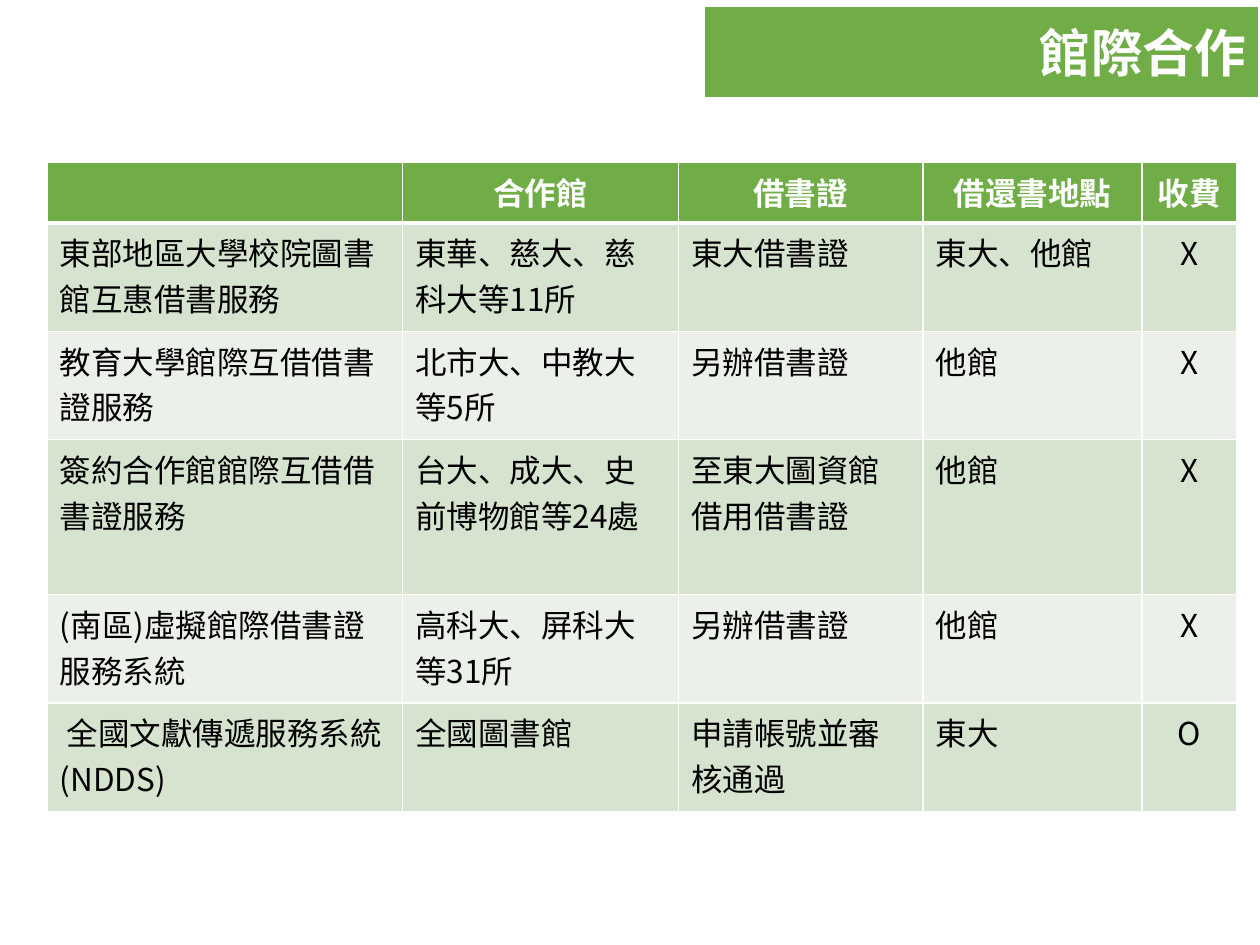
from dataclasses import dataclass

from lxml.etree import SubElement
from pptx import Presentation
from pptx.dml.color import RGBColor
from pptx.enum.shapes import MSO_SHAPE
from pptx.enum.text import MSO_ANCHOR, PP_ALIGN
from pptx.oxml.ns import qn
from pptx.util import Pt


@dataclass(frozen=True)
class Theme:
    """Colours, font and type sizes of the slide."""
    green: RGBColor = RGBColor(0x70, 0xAD, 0x47)
    band_dark: RGBColor = RGBColor(0xD5, 0xE3, 0xCF)
    band_light: RGBColor = RGBColor(0xEB, 0xF1, 0xE9)
    white: RGBColor = RGBColor(0xFF, 0xFF, 0xFF)
    black: RGBColor = RGBColor(0, 0, 0)
    font: str = "Noto Sans CJK SC"
    title: float = 29.5
    body: float = 18
    rule: float = 1
    header_rule: float = 3


THEME = Theme()
COL_WIDTHS = [203, 157.7, 139.7, 125.3, 54]
ROW_HEIGHTS = [34.6, 61.9, 61.9, 88.6, 61.9, 61.9]
ROWS = [
    ["", "合作館", "借書證", "借還書地點", "收費"],
    ["東部地區大學校院圖書館互惠借書服務", "東華、慈大、慈科大等11所", "東大借書證", "東大、他館", "X"],
    ["教育大學館際互借借書證服務", "北市大、中教大等5所", "另辦借書證", "他館", "X"],
    ["簽約合作館館際互借借書證服務", "台大、成大、史前博物館等24處", "至東大圖資館借用借書證", "他館", "X"],
    ["(南區)虛擬館際借書證服務系統", "高科大、屏科大等31所", "另辦借書證", "他館", "X"],
    [" 全國文獻傳遞服務系統(NDDS)", "全國圖書館", "申請帳號並審核通過", "東大", "O"],
]


def write(tf, text, size, color, bold, align):
    """Fill a text frame with one styled paragraph."""
    p = tf.paragraphs[0]
    p.text = text
    p.alignment = align
    f = p.font
    f.size, f.bold, f.name = Pt(size), bold, THEME.font
    f.color.rgb = color
    SubElement(p._p.pPr.find(qn("a:defRPr")), qn("a:ea"), typeface=THEME.font)


def set_borders(cell, top, bottom):
    """Draw white rules on the four sides of a cell."""
    tcPr = cell._tc.get_or_add_tcPr()
    widths = {"L": THEME.rule, "R": THEME.rule, "T": top, "B": bottom}
    for side, width in widths.items():
        ln = SubElement(tcPr, qn(f"a:ln{side}"), w=str(Pt(width)))
        fill = SubElement(ln, qn("a:solidFill"))
        SubElement(fill, qn("a:srgbClr"), val=str(THEME.white))


def add_title(s, x, y, w, h):
    """Place the green title banner in the given box."""
    sp = s.shapes.add_shape(MSO_SHAPE.RECTANGLE, Pt(x), Pt(y), Pt(w), Pt(h))
    sp.shadow.inherit = False
    sp.fill.solid()
    sp.fill.fore_color.rgb = THEME.green
    sp.line.color.rgb = THEME.white
    sp.line.width = Pt(THEME.rule)
    tf = sp.text_frame
    tf.word_wrap = True
    tf.vertical_anchor = MSO_ANCHOR.MIDDLE
    write(tf, "館際合作", THEME.title, THEME.white, True, PP_ALIGN.RIGHT)


def add_services(s, x, y, w, h):
    """Place the table of library services in the given box."""
    table = s.shapes.add_table(len(ROWS), len(COL_WIDTHS), Pt(x), Pt(y), Pt(w), Pt(h)).table
    for col, width in zip(table.columns, COL_WIDTHS):
        col.width = Pt(w * width / sum(COL_WIDTHS))
    for row, height in zip(table.rows, ROW_HEIGHTS):
        row.height = Pt(h * height / sum(ROW_HEIGHTS))
    for i, texts in enumerate(ROWS):
        header = i == 0
        band = THEME.band_dark if i % 2 else THEME.band_light
        for j, text in enumerate(texts):
            cell = table.cell(i, j)
            set_borders(cell, THEME.header_rule if i == 1 else THEME.rule,
                        THEME.header_rule if header else THEME.rule)
            cell.fill.solid()
            cell.fill.fore_color.rgb = THEME.green if header else band
            centred = header or j == len(texts) - 1
            write(cell.text_frame, text, THEME.body,
                  THEME.white if header else THEME.black, header,
                  PP_ALIGN.CENTER if centred else PP_ALIGN.LEFT)


def main():
    """Build and save the slide."""
    prs = Presentation()
    prs.slide_width, prs.slide_height = Pt(720), Pt(540)
    s = prs.slides.add_slide(prs.slide_layouts[6])
    add_title(s, 402.5, 3.6, 316.8, 52.5)
    add_services(s, 27, 92.9, 679.7, 370.8)
    prs.save("out.pptx")


if __name__ == "__main__":
    main()
